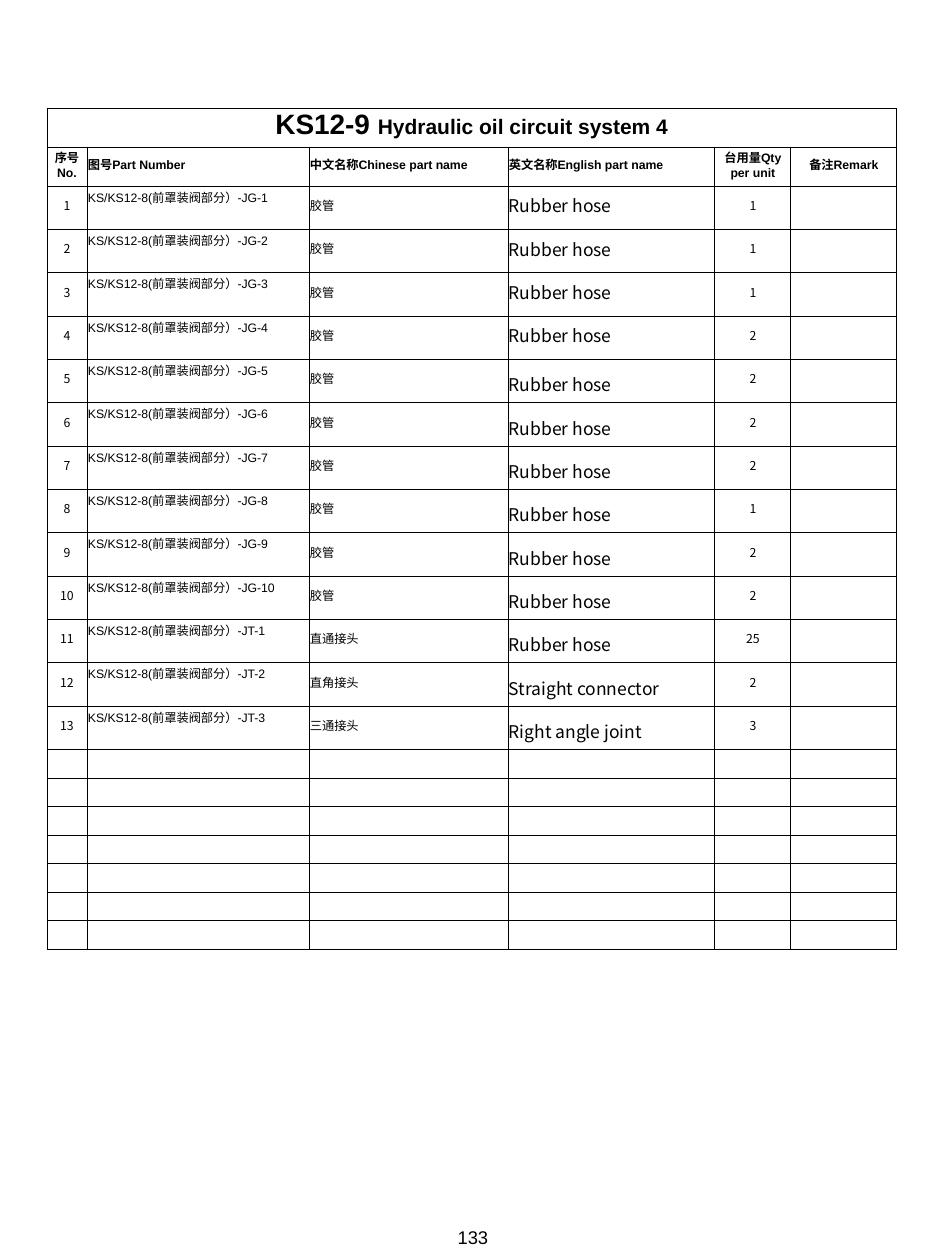
from lxml.etree import SubElement
from pptx import Presentation
from pptx.dml.color import RGBColor
from pptx.enum.text import MSO_ANCHOR, PP_ALIGN
from pptx.oxml.ns import qn
from pptx.util import Inches, Pt

SCALE = Inches(1) / 126
INK = {"black": "000000", "white": "FFFFFF"}
SANS, HAN = "Arial", "Noto Sans CJK SC"
COLS = [40, 222, 199, 207, 76, 106]
BANDS = [(1, 39), (1, 39), (13, 564), (7, 200)]
MID_COLS = (0, 4, 5)
HEADS = ["序号No.", "图号Part Number", "中文名称Chinese part name",
         "英文名称English part name", "台用量Qty per unit", "备注Remark"]
CODES = [f"JG-{n}" for n in range(1, 11)] + [f"JT-{n}" for n in range(1, 4)]
NAMES = ["胶管"] * 10 + ["直通接头", "直角接头", "三通接头"]
TERMS = ["Rubber hose"] * 11 + ["Straight connector", "Right angle joint"]
COUNTS = [1, 1, 1, 2, 2, 2, 2, 1, 2, 2, 25, 2, 3]


def px(num):
    return round(num * SCALE)


def style(run, size, face=SANS, bold=False):
    font = run.font
    font.size, font.name, font.bold = Pt(size), face, bold
    font.color.rgb = RGBColor.from_string(INK["black"])
    SubElement(run._r.get_or_add_rPr(), qn("a:ea"), typeface=HAN)


def frame(cell):
    cell.margin_left = cell.margin_right = cell.margin_top = px(1)
    cell.margin_bottom = px(6)
    cell.vertical_anchor = MSO_ANCHOR.MIDDLE
    props = cell._tc.get_or_add_tcPr()
    for side in "LRTB":
        line = SubElement(props, qn(f"a:ln{side}"), w=str(Pt(0.5)))
        fill = SubElement(line, qn("a:solidFill"))
        SubElement(fill, qn("a:srgbClr"), val=INK["black"])
    cell.fill.background()
    para = cell.text_frame.paragraphs[0]
    SubElement(para._p, qn("a:endParaRPr"), sz="700")


def write(cell, text, size=7, face=SANS, bold=False, mid=False):
    para = cell.text_frame.paragraphs[0]
    para.text = text
    para.alignment = PP_ALIGN.CENTER if mid else PP_ALIGN.LEFT
    style(para.runs[0], size, face, bold)


def title(cell):
    write(cell, "KS12-9 ", 16, bold=True, mid=True)
    run = cell.text_frame.paragraphs[0].add_run()
    run.text = "Hydraulic oil circuit system 4"
    style(run, 12, bold=True)


def parts(slide, left, top, width, height):
    count = sum(num for num, _ in BANDS)
    grid = slide.shapes.add_table(count, len(COLS), px(left), px(top),
                                  px(width), px(height)).table
    grid.first_row = grid.horz_banding = False
    for col, size in zip(grid.columns, COLS):
        col.width = px(size)
    sizes = [px(total) // num for num, total in BANDS for _ in range(num)]
    for row, size in zip(grid.rows, sizes):
        row.height = size
    for cell in grid.iter_cells():
        frame(cell)
    grid.cell(0, 0).merge(grid.cell(0, len(COLS) - 1))
    title(grid.cell(0, 0))
    for col, text in enumerate(HEADS):
        write(grid.cell(1, col), text, bold=True, mid=col in MID_COLS)
    items = zip(CODES, NAMES, TERMS, COUNTS)
    for num, (code, name, term, qty) in enumerate(items, 1):
        cells = grid.rows[num + 1].cells
        write(cells[0], str(num), face=HAN, mid=True)
        write(cells[1], f"KS/KS12-8(前罩装阀部分）-{code}")
        write(cells[2], name)
        write(cells[3], term, 10, HAN)
        write(cells[4], str(qty), face=HAN, mid=True)
        cells[1].vertical_anchor = MSO_ANCHOR.TOP
        cells[1].margin_top = px(2)
        if num > 4:
            cells[3].vertical_anchor = MSO_ANCHOR.BOTTOM
        for col in (0, 2, 3) if num <= 4 else (0, 2):
            cells[col].fill.solid()
            cells[col].fill.fore_color.rgb = RGBColor.from_string(INK["white"])


def folio(slide, left, top, width, height):
    box = slide.shapes.add_textbox(px(left), px(top), px(width), px(height))
    body = box.text_frame
    body.word_wrap = True
    body.vertical_anchor = MSO_ANCHOR.MIDDLE
    para = body.paragraphs[0]
    para.text = "133"
    para.alignment = PP_ALIGN.CENTER
    style(para.runs[0], 10.5)


def main():
    deck = Presentation()
    deck.slide_width, deck.slide_height = px(945), px(1260)
    slide = deck.slides.add_slide(deck.slide_layouts[6])
    parts(slide, 47, 108, 850, 842)
    folio(slide, 323, 1220, 300, 35)
    deck.save("out.pptx")


if __name__ == "__main__":
    main()
